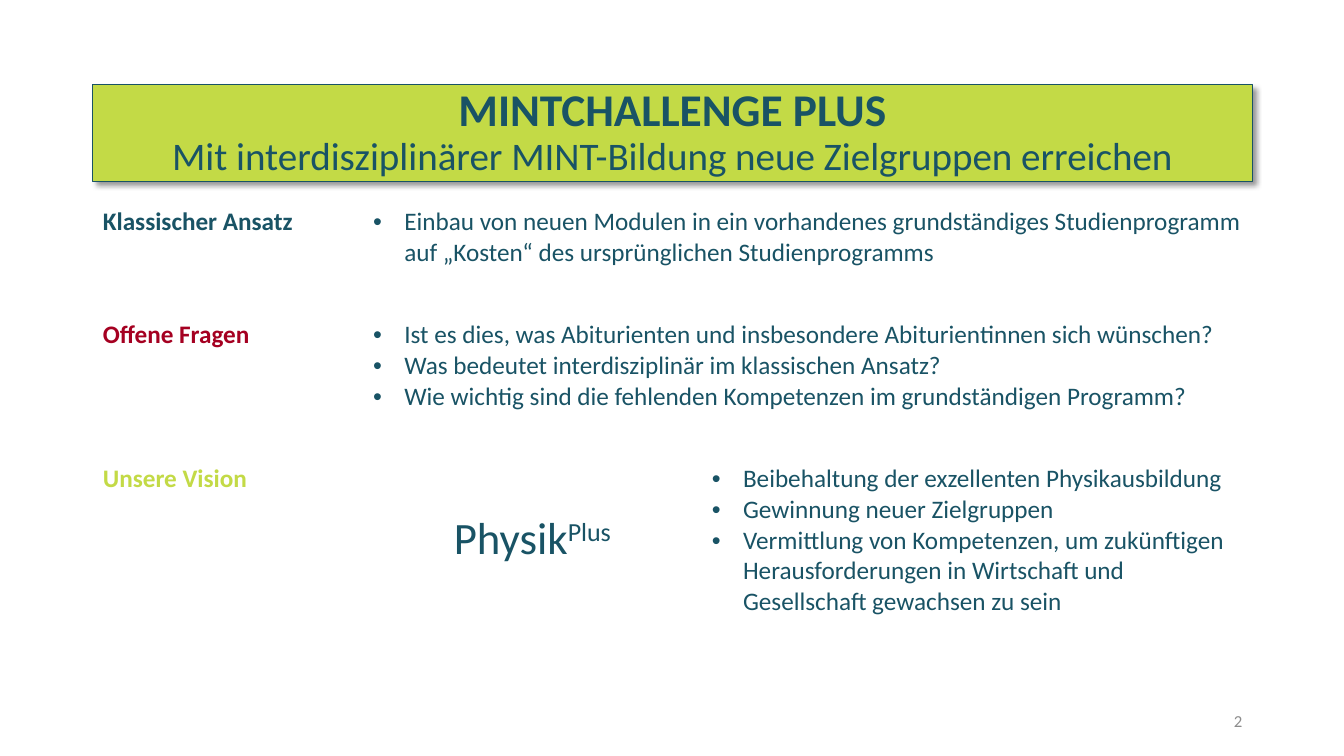
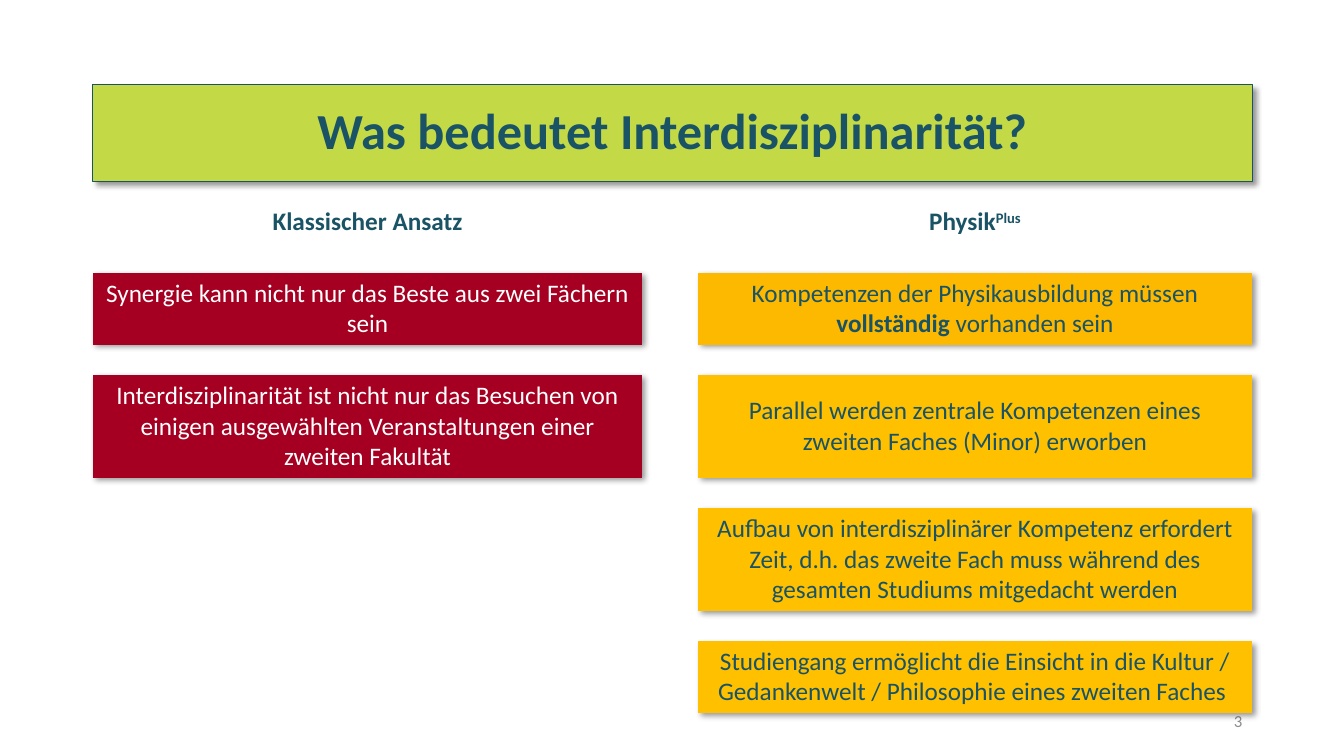
from dataclasses import dataclass

from lxml import etree
from pptx import Presentation
from pptx.dml.color import RGBColor
from pptx.enum.shapes import MSO_SHAPE as SHAPE
from pptx.enum.text import MSO_ANCHOR as ANCHOR, PP_ALIGN as ALIGN
from pptx.oxml.ns import qn
from pptx.util import Inches, Pt


@dataclass(frozen=True)
class Theme:
    font: str = "Calibri"
    petrol: str = "195365"
    lime: str = "C3DA46"
    red: str = "A50021"
    amber: str = "FCB900"
    yellow: str = "FFC000"
    white: str = "FFFFFF"
    gray: str = "8C8C8C"
    title: float = 36
    title_pair: float = 32.4
    subtitle: float = 27.9
    display: float = 32
    body: float = 18
    gap: float = 12
    small: float = 12
    left: float = 0.92
    width: float = 11.5
    indent: float = 0.31
    no_style: str = "{2D5ABB26-0587-4C30-8999-92F81FD0307C}"


@dataclass(frozen=True)
class Run:
    text: str
    size: float = Theme.body
    color: str = Theme.petrol
    bold: bool = False
    raised: bool = False


T = Theme()


class Deck:
    def __init__(self):
        self.prs = Presentation()
        self.prs.slide_width = Inches(13.33)
        self.prs.slide_height = Inches(7.5)
        self.s = None

    # Text and effects
    def add_run(self, p, run):
        r = p.add_run()
        r.text = run.text
        font = r.font
        font.name, font.size, font.bold = T.font, Pt(run.size), run.bold
        font.color.rgb = RGBColor.from_string(run.color)
        if run.raised:
            r._r.get_or_add_rPr().set("baseline", "30000")

    def add_bullet(self, p):
        pPr = p._p.get_or_add_pPr()
        pPr.set("marL", str(Inches(T.indent)))
        pPr.set("indent", str(-Inches(T.indent)))
        etree.SubElement(pPr, qn("a:buFont"), typeface="Arial")
        etree.SubElement(pPr, qn("a:buChar"), char="•")

    def add_text(self, tf, paragraphs, align=ALIGN.LEFT, bullets=False):
        tf.word_wrap = True
        for i, runs in enumerate(paragraphs):
            p = tf.add_paragraph() if i else tf.paragraphs[0]
            p.alignment = align
            if bullets:
                self.add_bullet(p)
            for run in runs:
                self.add_run(p, run)

    def shadow(self, effects):
        shd = etree.SubElement(effects, qn("a:outerShdw"), blurRad=str(Pt(4)),
                               dist=str(Pt(3)), dir="2700000", algn="tl",
                               rotWithShape="0")
        color = etree.SubElement(shd, qn("a:prstClr"), val="black")
        etree.SubElement(color, qn("a:alpha"), val="40000")

    # Slide frame: title band and page number
    def slide(self, number, *title):
        self.s = self.prs.slides.add_slide(self.prs.slide_layouts[6])
        self.band(title)
        sp = self.s.shapes.add_textbox(Inches(9.42), Inches(6.95),
                                       Inches(3), Inches(0.4))
        sp.text_frame.vertical_anchor = ANCHOR.MIDDLE
        self.add_text(sp.text_frame, [[Run(str(number), T.small, T.gray)]],
                      ALIGN.RIGHT)

    def band(self, lines):
        sp = self.s.shapes.add_shape(SHAPE.RECTANGLE, Inches(T.left),
                                     Inches(0.84), Inches(T.width),
                                     Inches(0.96))
        sp.fill.solid()
        sp.fill.fore_color.rgb = RGBColor.from_string(T.lime)
        sp.line.color.rgb = RGBColor.from_string(T.petrol)
        sp.line.width = Pt(0.75)
        sp.shadow.inherit = False
        self.shadow(sp._element.spPr.find(qn("a:effectLst")))
        tf = sp.text_frame
        tf.word_wrap = True
        tf.vertical_anchor = ANCHOR.MIDDLE
        p = tf.paragraphs[0]
        p.alignment, p.line_spacing = ALIGN.CENTER, 0.9
        for i, run in enumerate(lines):
            if i:
                p.add_line_break()
            self.add_run(p, run)

    # Tables
    def table(self, widths, heights, empty_size, shadow=False):
        frame = self.s.shapes.add_table(
            len(heights), len(widths), Inches(T.left), Inches(2),
            Inches(T.width), Inches(sum(heights)))
        tbl = frame.table
        tbl.first_row = tbl.horz_banding = False
        for col, width in zip(tbl.columns, widths):
            col.width = Inches(width)
        for row, height in zip(tbl.rows, heights):
            row.height = Inches(height)
        tblPr = tbl._tbl.tblPr
        tblPr.find(qn("a:tableStyleId")).text = T.no_style
        if shadow:
            effects = etree.Element(qn("a:effectLst"))
            tblPr.insert(0, effects)
            self.shadow(effects)
        for cell in tbl.iter_cells():
            cell.fill.background()
            end = cell.text_frame.paragraphs[0]._p.get_or_add_endParaRPr()
            end.set("sz", str(int(empty_size * 100)))
        return tbl

    def cell(self, cell, paragraphs, fill=None, centered=False, bullets=False):
        if fill:
            cell.fill.solid()
            cell.fill.fore_color.rgb = RGBColor.from_string(fill)
        if centered:
            cell.vertical_anchor = ANCHOR.MIDDLE
        self.add_text(cell.text_frame, paragraphs,
                      ALIGN.CENTER if centered else ALIGN.LEFT, bullets)

    def bullets(self, cell, *items):
        self.cell(cell, [[Run(item)] for item in items], bullets=True)


def vision_slide(deck):
    deck.slide(2, Run("MINTCHALLENGE PLUS", T.title_pair, bold=True),
               Run("Mit interdisziplinärer MINT-Bildung neue Zielgruppen "
                   "erreichen", T.subtitle))
    tbl = deck.table([2.68, 3.36, 5.46], [0.71, 0.41, 1.02, 0.41, 1.56], T.body)

    # Row labels
    labels = [("Klassischer Ansatz", T.petrol), ("Offene Fragen", T.red),
              ("Unsere Vision", T.lime)]
    for i, (label, color) in enumerate(labels):
        deck.cell(tbl.cell(2 * i, 0), [[Run(label, color=color, bold=True)]])

    # Row contents
    for row in range(3):
        tbl.cell(row, 1).merge(tbl.cell(row, 2))
    deck.bullets(
        tbl.cell(0, 1),
        "Einbau von neuen Modulen in ein vorhandenes grundständiges "
        "Studienprogramm auf „Kosten“ des ursprünglichen Studienprogramms")
    deck.bullets(
        tbl.cell(2, 1),
        "Ist es dies, was Abiturienten und insbesondere Abiturientinnen "
        "sich wünschen?",
        "Was bedeutet interdisziplinär im klassischen Ansatz?",
        "Wie wichtig sind die fehlenden Kompetenzen im grundständigen "
        "Programm?")
    deck.cell(tbl.cell(4, 1), [[Run("Physik", T.display),
                                Run("Plus", T.display, raised=True)]],
              centered=True)
    deck.bullets(
        tbl.cell(4, 2),
        "Beibehaltung der exzellenten Physikausbildung",
        "Gewinnung neuer Zielgruppen",
        "Vermittlung von Kompetenzen, um zukünftigen Herausforderungen in "
        "Wirtschaft und Gesellschaft gewachsen zu sein")


def comparison_slide(deck):
    deck.slide(3, Run("Was bedeutet Interdisziplinarität?", T.title, bold=True))
    gap = 0.3
    tbl = deck.table([5.45, 0.55, 5.5],
                     [0.41, gap, 0.71, gap, 1.02, gap, 1.02, gap, 0.71],
                     T.gap, shadow=True)

    # Column heads
    deck.cell(tbl.cell(0, 0), [[Run("Klassischer Ansatz", bold=True)]],
              centered=True)
    deck.cell(tbl.cell(0, 2), [[Run("Physik", bold=True),
                                Run("Plus", bold=True, raised=True)]],
              centered=True)

    # Statements, one on every second row
    classic = [
        "Synergie kann nicht nur das Beste aus zwei Fächern sein",
        "Interdisziplinarität ist nicht nur das Besuchen von einigen "
        "ausgewählten Veranstaltungen einer zweiten Fakultät",
    ]
    plus = [
        [Run("Kompetenzen der Physikausbildung müssen "),
         Run("vollständig", bold=True), Run(" vorhanden sein")],
        [Run("Parallel werden zentrale Kompetenzen eines zweiten Faches "
             "(Minor) erworben")],
        [Run("Aufbau von interdisziplinärer Kompetenz erfordert Zeit, d.h. "
             "das zweite Fach muss während des gesamten Studiums mitgedacht "
             "werden")],
        [Run("Studiengang ermöglicht die Einsicht in die Kultur / "
             "Gedankenwelt / Philosophie eines zweiten Faches ")],
    ]
    for i, text in enumerate(classic, 1):
        deck.cell(tbl.cell(2 * i, 0), [[Run(text, color=T.white)]], T.red,
                  centered=True)
    for i, runs in enumerate(plus, 1):
        deck.cell(tbl.cell(2 * i, 2), [runs], T.amber if i == 1 else T.yellow,
                  centered=True)


def main():
    deck = Deck()
    vision_slide(deck)
    comparison_slide(deck)
    deck.prs.save("out.pptx")


if __name__ == "__main__":
    main()
